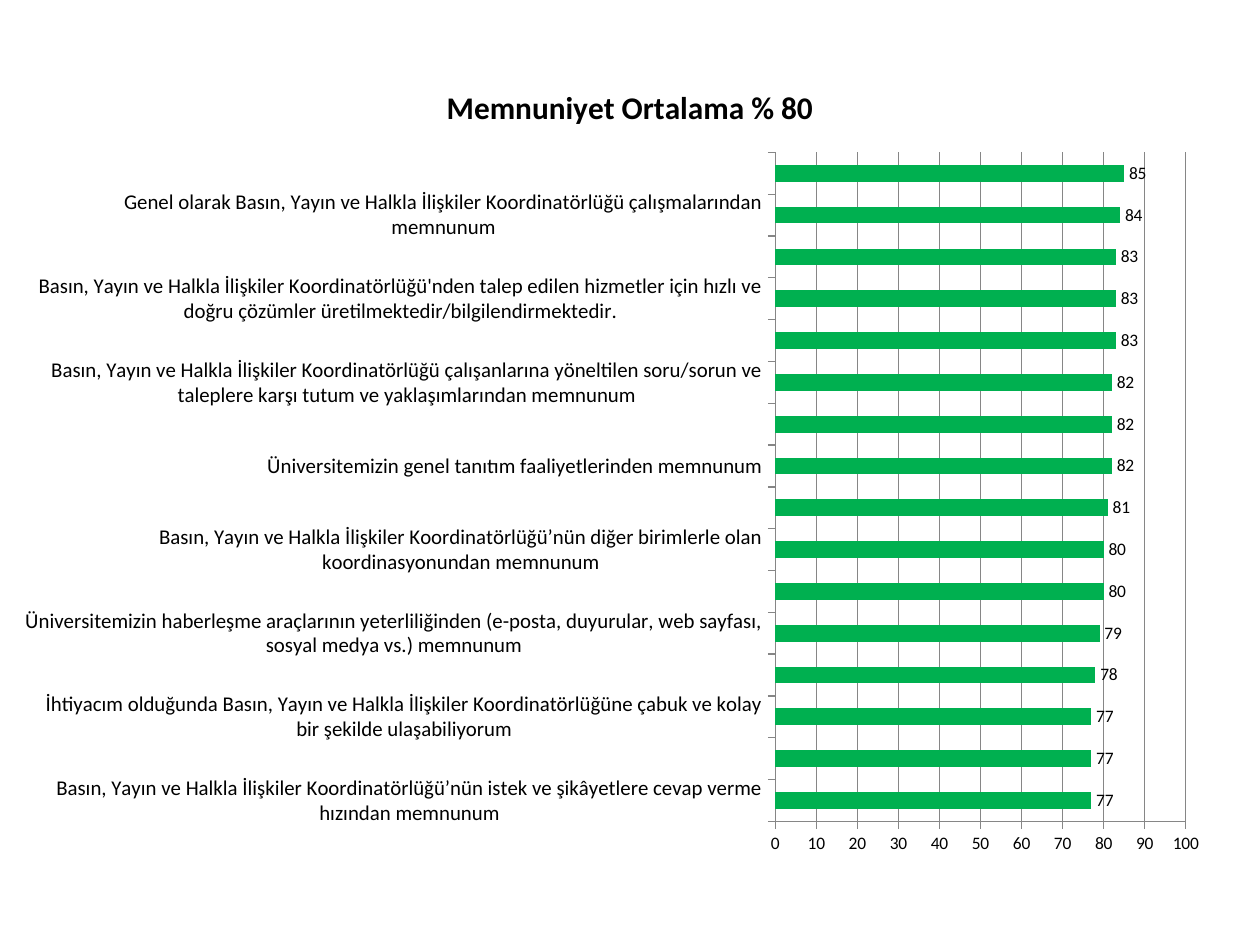
"""Build a slide with a bar chart of satisfaction scores per survey statement."""
from lxml.etree import SubElement
from pptx import Presentation
from pptx.chart.data import CategoryChartData
from pptx.dml.color import RGBColor
from pptx.enum.chart import XL_CHART_TYPE, XL_LABEL_POSITION, XL_TICK_MARK
from pptx.oxml.ns import qn
from pptx.util import Inches, Pt

BLACK = RGBColor(0x00, 0x00, 0x00)
GREEN = RGBColor(0x00, 0xB0, 0x50)
GRAY = RGBColor(0x86, 0x86, 0x86)

TITLE = "Memnuniyet Ortalama % 80"
OFFICE = "Basın, Yayın ve Halkla İlişkiler Koordinatörlüğü"
STATEMENTS = [
    f"{OFFICE}’nün istek ve şikâyetlere cevap verme hızından memnunum",
    f"İhtiyacım olduğunda {OFFICE}ne çabuk ve kolay bir şekilde ulaşabiliyorum",
    ("Üniversitemizin haberleşme araçlarının yeterliliğinden "
     "(e-posta, duyurular, web sayfası, sosyal medya vs.) memnunum"),
    f"{OFFICE}’nün diğer birimlerle olan koordinasyonundan memnunum",
    "Üniversitemizin genel tanıtım faaliyetlerinden memnunum",
    (f"{OFFICE} çalışanlarına yöneltilen soru/sorun ve taleplere karşı "
     "tutum ve yaklaşımlarından memnunum"),
    (f"{OFFICE}'nden talep edilen hizmetler için hızlı ve doğru çözümler "
     "üretilmektedir/bilgilendirmektedir."),
    f"Genel olarak {OFFICE} çalışmalarından memnunum",
]
SCORES = [77, 77, 77, 78, 79, 80, 80, 81, 82, 82, 82, 83, 83, 83, 84, 85]


class SlideBuilder:
    """Hold the style and the current slide."""

    font_name = "Calibri"

    def __init__(self, presentation):
        """Add an empty slide to draw on."""
        self.slide = presentation.slides.add_slide(presentation.slide_layouts[6])

    def style_font(self, font, size, bold=False):
        """Apply the house font."""
        font.name = self.font_name
        font.size = Pt(size)
        font.bold = bold
        font.color.rgb = BLACK

    def place(self, element, index, **settings):
        """Give a chart part a fixed place in fractions of the chart."""
        for old_layout in element.findall(qn("c:layout")):
            element.remove(old_layout)
        layout = SubElement(element, qn("c:layout"))
        element.insert(index, layout)
        manual = SubElement(layout, qn("c:manualLayout"))
        for name, value in settings.items():
            SubElement(manual, qn(f"c:{name}")).set("val", str(value))

    def style_axis(self, axis, size):
        """Format an axis with outward ticks and a gray line."""
        axis.major_tick_mark = XL_TICK_MARK.OUTSIDE
        axis.minor_tick_mark = XL_TICK_MARK.NONE
        axis.format.line.color.rgb = GRAY
        self.style_font(axis.tick_labels.font, size)

    def add_title(self, chart, text):
        """Add the chart title."""
        chart.has_title = True
        paragraph = chart.chart_title.text_frame.paragraphs[0]
        run = paragraph.add_run()
        run.text = text
        self.style_font(run.font, 18, bold=True)

    def add_bar_chart(self, title, statements, scores, left, top, width, height):
        """Add a horizontal bar chart that names every second bar."""
        categories = [""] * len(scores)
        categories[::2] = statements
        data = CategoryChartData(number_format="0")
        data.categories = categories
        data.add_series(title, scores)
        chart = self.slide.shapes.add_chart(
            XL_CHART_TYPE.BAR_CLUSTERED, left, top, width, height, data).chart
        self.style_font(chart.font, 10)
        chart.has_legend = False
        self.add_title(chart, title)

        self.style_axis(chart.category_axis, 12)
        value_axis = chart.value_axis
        self.style_axis(value_axis, 10)
        value_axis.minimum_scale = 0
        value_axis.maximum_scale = 100
        value_axis.major_unit = 10
        value_axis.major_gridlines.format.line.color.rgb = GRAY
        value_axis.tick_labels.number_format = "0"
        value_axis.tick_labels.number_format_is_linked = False

        plot = chart.plots[0]
        plot.gap_width = 150
        plot.vary_by_categories = False
        fill = plot.series[0].format.fill
        fill.solid()
        fill.fore_color.rgb = GREEN
        plot.has_data_labels = True
        labels = plot.data_labels
        labels.show_value = True
        labels.number_format = "0"
        labels.number_format_is_linked = False
        labels.position = XL_LABEL_POSITION.OUTSIDE_END
        self.style_font(labels.font, 10)

        self.place(chart.chart_title._element, 1, xMode="edge", yMode="edge",
                   x=Inches(3.26) / width, y=Inches(0.19) / height)
        self.place(chart._chartSpace.chart.plotArea, 0,
                   layoutTarget="inner", xMode="edge", yMode="edge",
                   x=Inches(5.93) / width, y=Inches(0.77) / height,
                   w=Inches(3.28) / width, h=Inches(5.31) / height)


def main():
    """Create and save the presentation."""
    presentation = Presentation()
    presentation.slide_width = Inches(10)
    presentation.slide_height = Inches(7.5)
    builder = SlideBuilder(presentation)
    builder.add_bar_chart(TITLE, STATEMENTS, SCORES, Inches(0.2), Inches(0.44),
                          Inches(9.53), Inches(6.46))
    presentation.save("out.pptx")


if __name__ == "__main__":
    main()
